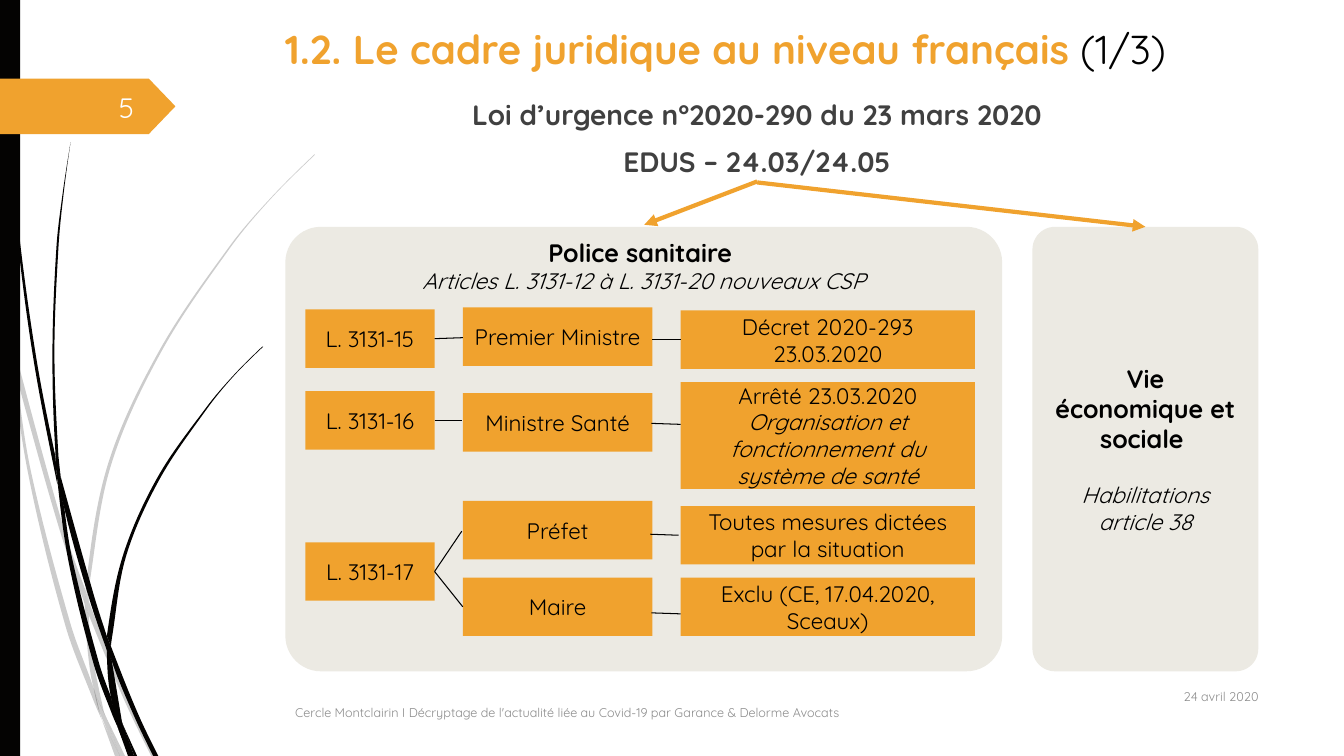
"""Build the slide on the French legal framework."""
from dataclasses import dataclass
from typing import NamedTuple

from lxml import etree
from pptx import Presentation
from pptx import util as u
from pptx.dml.color import RGBColor
from pptx.enum import shapes as es, text as et
from pptx.oxml import ns

ORANGE = RGBColor(0xF0, 0xA2, 0x2E)
INK = RGBColor(0x04, 0x03, 0x02)
SAND = RGBColor(0xEC, 0xEA, 0xE3)
BLACK = RGBColor(0, 0, 0)
DARK = RGBColor(0x40, 0x40, 0x40)
GREY = RGBColor(0x8C, 0x8C, 0x8C)
WHITE = RGBColor(0xFE, 0xFF, 0xFF)
FACE = "Quicksand"
KIND = es.MSO_SHAPE
SIDE = et.PP_ALIGN
HOLD = et.MSO_ANCHOR
Chain = list[tuple[float, float]]


class Box(NamedTuple):
    x: float
    y: float
    w: float
    h: float


class Para(NamedTuple):
    text: str
    size: float = 16
    color: RGBColor = BLACK
    bold: bool = False
    slant: bool = False
    gap: float = 0


class Blade(NamedTuple):
    down: Chain
    back: Chain


@dataclass
class Card:
    col: int
    y: float
    paras: list[Para]
    h: float = 0.58


@dataclass
class Link:
    start: tuple[float, float]
    end: tuple[float, float]
    color: RGBColor = BLACK
    width: float = 0.75
    arrow: bool = False


PALE = [
    Blade([(0, 2.82), (0.09, 3.22), (0.11, 3.5)], [(0.1, 3.44), (0, 2.99)]),
    Blade([(0.14, 3.45), (0.62, 5.2), (0.85, 5.86)], [(0.84, 5.99), (0.58, 5.22), (0.17, 3.76)]),
    Blade([(0.88, 5.96), (0.92, 6.07), (1.27, 6.92), (1.55, 7.5)],
          [(1.5, 7.5), (1.23, 6.94), (0.88, 6.1)]),
    Blade([(1.05, 7.11), (1.24, 7.5)], [(1.19, 7.5)]),
    Blade([(0.11, 3.5), (0.28, 4.7), (0.65, 6.21), (0.92, 6.93), (1.01, 7.14)],
          [(0.99, 7.07), (0.93, 6.83), (0.7, 6.19), (0.31, 4.69), (0.17, 3.76)]),
    Blade([(0.84, 5.99), (0.87, 6.46), (0.93, 6.83), (1.05, 7.11)],
          [(1.03, 7.06), (0.91, 6.46), (0.88, 6.1)]),
    Blade([(3.12, 1.53), (2.68, 1.97), (2.28, 2.44), (1.58, 3.48), (1.07, 4.61), (0.85, 5.84)],
          [(0.88, 5.96), (0.88, 5.84), (1.1, 4.62), (1.6, 3.49), (2.29, 2.45), (2.68, 1.98),
           (3.12, 1.54)]),
    Blade([(1.01, 7.14), (1.14, 7.5)], [(1.19, 7.5)]),
    Blade([(0.85, 5.86), (0.84, 5.99)], [(0.88, 6.1), (0.88, 5.96)]),
    Blade([(0.93, 6.83), (0.99, 7.07), (1.19, 7.5)], [(1.05, 7.11), (0.96, 6.92)]),
]
DEEP = [
    Blade([(0.03, 0), (0.07, 1.1), (0.17, 2.33), (0.33, 3.55), (0.57, 4.81)],
          [(0.55, 4.53), (0.36, 3.55), (0.19, 2.32), (0.08, 1.09), (0.04, 0)]),
    Blade([(0.6, 4.72), (0.64, 5.05), (0.88, 5.92), (1.06, 6.45)],
          [(1.06, 6.31), (0.93, 5.9), (0.6, 4.72)]),
    Blade([(1.1, 6.41), (1.11, 6.56), (1.32, 7.08), (1.52, 7.5)],
          [(1.57, 7.5), (1.36, 7.06), (1.1, 6.41)]),
    Blade([(0.57, 4.77), (0.68, 5.57), (0.93, 6.59), (1.11, 7.08), (1.17, 7.22)],
          [(1.1, 6.91), (0.98, 6.57), (0.72, 5.56), (0.64, 5.05)]),
    Blade([(0.7, 1.41), (0.62, 1.93), (0.56, 2.45), (0.52, 3.49), (0.55, 4.49), (0.6, 4.72)],
          [(0.58, 4.53), (0.54, 3.49), (0.58, 2.45), (0.63, 1.93), (0.7, 1.41)]),
    Blade([(1.22, 7.19), (1.33, 7.5)], [(1.36, 7.5)]),
    Blade([(0.55, 4.49), (0.57, 4.77), (0.64, 5.05)], [(0.6, 4.72)]),
    Blade([(2.6, 3.44), (2.31, 3.73), (2.04, 4.05), (1.56, 4.74), (1.22, 5.51), (1.06, 6.31)],
          [(1.1, 6.41), (1.11, 6.33), (1.25, 5.52), (1.58, 4.76), (2.05, 4.06), (2.31, 3.74),
           (2.61, 3.44)]),
    Blade([(1.17, 7.22), (1.27, 7.5)], [(1.31, 7.5)]),
    Blade([(1.06, 6.45), (1.1, 6.91), (1.22, 7.19)], [(1.21, 7.16), (1.11, 6.56)]),
    Blade([(1.06, 6.31), (1.06, 6.45), (1.11, 6.56)], [(1.1, 6.41)]),
    Blade([(1.1, 6.91), (1.17, 7.22), (1.3, 7.5)], [(1.33, 7.5), (1.22, 7.19), (1.16, 7.06)]),
]
COLS = [(3.03, 1.28), (4.59, 1.88), (6.75, 2.92)]
CARDS = [
    Card(0, 3.07, [Para("L. 3131-15")]),
    Card(1, 3.05, [Para("Premier Ministre")]),
    Card(2, 3.08, [Para("Décret 2020-293"), Para("23.03.2020")]),
    Card(0, 3.88, [Para("L. 3131-16")]),
    Card(1, 3.9, [Para("Ministre Santé")]),
    Card(2, 3.79, [Para("Arrêté 23.03.2020"),
                   Para("Organisation et fonctionnement du système de santé", slant=True)], 1.06),
    Card(0, 5.38, [Para("L. 3131-17")]),
    Card(1, 4.97, [Para("Préfet")]),
    Card(2, 5.02, [Para("Toutes mesures dictées par la situation")]),
    Card(1, 5.73, [Para("Maire")]),
    Card(2, 5.73, [Para("Exclu (CE, 17.04.2020, Sceaux)")]),
]
LINKS = [
    Link((4.31, 3.36), (4.59, 3.35)), Link((6.47, 3.37), (6.75, 3.37)),
    Link((4.31, 4.17), (4.58, 4.17)), Link((6.46, 4.2), (6.75, 4.21)),
    Link((4.31, 5.67), (4.58, 5.27)), Link((4.31, 5.67), (4.59, 6.02)),
    Link((6.45, 5.3), (6.73, 5.31)), Link((6.46, 6.08), (6.75, 6.09)),
    Link((7.51, 1.8), (6.39, 2.23), ORANGE, 3, True),
    Link((7.51, 1.81), (11.36, 2.25), ORANGE, 3, True),
]


def paint(shape, color: RGBColor) -> None:
    shape.shadow.inherit = False
    shape.fill.solid()
    shape.fill.fore_color.rgb = color
    shape.line.fill.background()


def write(shape, paras: list[Para], side=SIDE.CENTER, hold=HOLD.MIDDLE):
    frame = shape.text_frame
    frame.word_wrap, frame.vertical_anchor = True, hold
    for i, para in enumerate(paras):
        line = frame.paragraphs[0] if i == 0 else frame.add_paragraph()
        line.text, line.alignment = para.text, side
        if para.gap:
            line.space_before = u.Pt(para.gap)
        font = line.font
        font.name, font.size = FACE, u.Pt(para.size)
        font.bold, font.italic = para.bold, para.slant
        font.color.rgb = para.color
    return frame


def block(slide, kind, box: Box, color: RGBColor, bend: float | None = None):
    shape = slide.shapes.add_shape(kind, *map(u.Inches, box))
    if bend is not None:
        shape.adjustments[0] = bend
    paint(shape, color)
    return shape


def label(slide, box: Box, paras: list[Para], side=SIDE.CENTER, hold=HOLD.MIDDLE):
    return write(slide.shapes.add_textbox(*map(u.Inches, box)), paras, side, hold)


def bends(chain: Chain) -> list[tuple[complex, complex]]:
    dots = [complex(*dot) for dot in chain]
    turns = [(c - a) / abs(c - a) for a, c in zip(dots, dots[2:])]
    legs, last = [], len(dots) - 2
    for i, (a, b) in enumerate(zip(dots, dots[1:])):
        third = abs(b - a) / 3
        near = a + turns[i - 1] * third if i else a + (b - a) / 3
        far = b - turns[i] * third if i < last else (b + near) / 2
        legs.append((near if i else (a + far) / 2, far))
    return legs


def sweep(slide, blade: Blade, faint: bool) -> None:
    dots = [(u.Inches(x), u.Inches(y)) for x, y in blade.down + blade.back]
    pen = slide.shapes.build_freeform(*dots[0])
    pen.add_line_segments(dots[1:])
    shape = pen.convert_to_shape()
    paint(shape, INK)
    legs = bends(blade.down) + [()] + bends(blade.back)
    for leg, step in zip(legs, list(shape.element.iter(ns.qn("a:lnTo")))):
        for i, dot in enumerate(leg):
            step.tag = ns.qn("a:cubicBezTo")
            x, y = u.Inches(dot.real) - shape.left, u.Inches(dot.imag) - shape.top
            step.insert(i, etree.Element(ns.qn("a:pt"), x=str(x), y=str(y)))
    if faint:
        tint = next(shape.element.iter(ns.qn("a:srgbClr")))
        etree.SubElement(tint, ns.qn("a:alpha"), val="20000")


def join(slide, link: Link) -> None:
    wire = slide.shapes.add_connector(es.MSO_CONNECTOR.STRAIGHT,
                                      *map(u.Inches, link.start + link.end))
    wire.line.color.rgb, wire.line.width = link.color, u.Pt(link.width)
    props = wire.element.spPr
    if link.arrow:
        etree.SubElement(props.find(ns.qn("a:ln")), ns.qn("a:tailEnd"), type="triangle")
    etree.SubElement(props, ns.qn("a:effectLst"))


def main() -> None:
    deck = Presentation()
    deck.slide_width, deck.slide_height = u.Inches(13.33), u.Inches(7.5)
    slide = deck.slides.add_slide(deck.slide_layouts[6])
    for blade in PALE + DEEP:
        sweep(slide, blade, blade in PALE)
    block(slide, KIND.RECTANGLE, Box(0, 0, 0.2, 7.5), INK)
    block(slide, KIND.PENTAGON, Box(0, 0.78, 1.74, 0.55), ORANGE, 0.48)
    title = label(slide, Box(2.73, 0.19, 9.75, 0.72),
                  [Para("1.2. Le cadre juridique au niveau français", 28.8, ORANGE, True)],
                  SIDE.LEFT, HOLD.TOP)
    count = title.paragraphs[0].add_run()
    count.text, count.font.bold = " (1/3)", False
    count.font.color.rgb = BLACK
    label(slide, Box(3.03, 1.01, 8.96, 0.81),
          [Para("Loi d’urgence n°2020-290 du 23 mars 2020", 20, DARK, True),
           Para("EDUS – 24.03/24.05", 20, DARK, True, gap=10)], hold=HOLD.BOTTOM)
    life = block(slide, KIND.ROUNDED_RECTANGLE, Box(10.24, 2.25, 2.24, 4.41), SAND, 0.1)
    frame = write(life, [Para("Vie économique et sociale ", 18, bold=True),
                         Para("Habilitations article 38", slant=True, gap=20)])
    frame.margin_left = frame.margin_right = u.Inches(0.15)
    police = block(slide, KIND.ROUNDED_RECTANGLE, Box(2.83, 2.25, 7.11, 4.41), SAND, 0.08)
    write(police, [Para("Police sanitaire ", 18, bold=True),
                   Para("Articles L. 3131-12 à L. 3131-20 nouveaux CSP", slant=True)],
          hold=HOLD.TOP).margin_top = 0
    for card in CARDS:
        left, width = COLS[card.col]
        write(block(slide, KIND.RECTANGLE, Box(left, card.y, width, card.h), ORANGE), card.paras)
    for link in LINKS:
        join(slide, link)
    note = ("Cercle Montclairin I Décryptage de l'actualité liée au Covid-19 "
            "par Garance & Delorme Avocats")
    label(slide, Box(2.83, 6.87, 8.33, 0.4), [Para(note, 9, GREY)], SIDE.LEFT)
    label(slide, Box(0.58, 0.86, 0.85, 0.4), [Para("5", 20, WHITE)], SIDE.RIGHT)
    label(slide, Box(11.33, 6.7, 1.25, 0.41), [Para("24 avril 2020", 9, GREY)], SIDE.RIGHT)
    deck.save("out.pptx")


if __name__ == "__main__":
    main()
